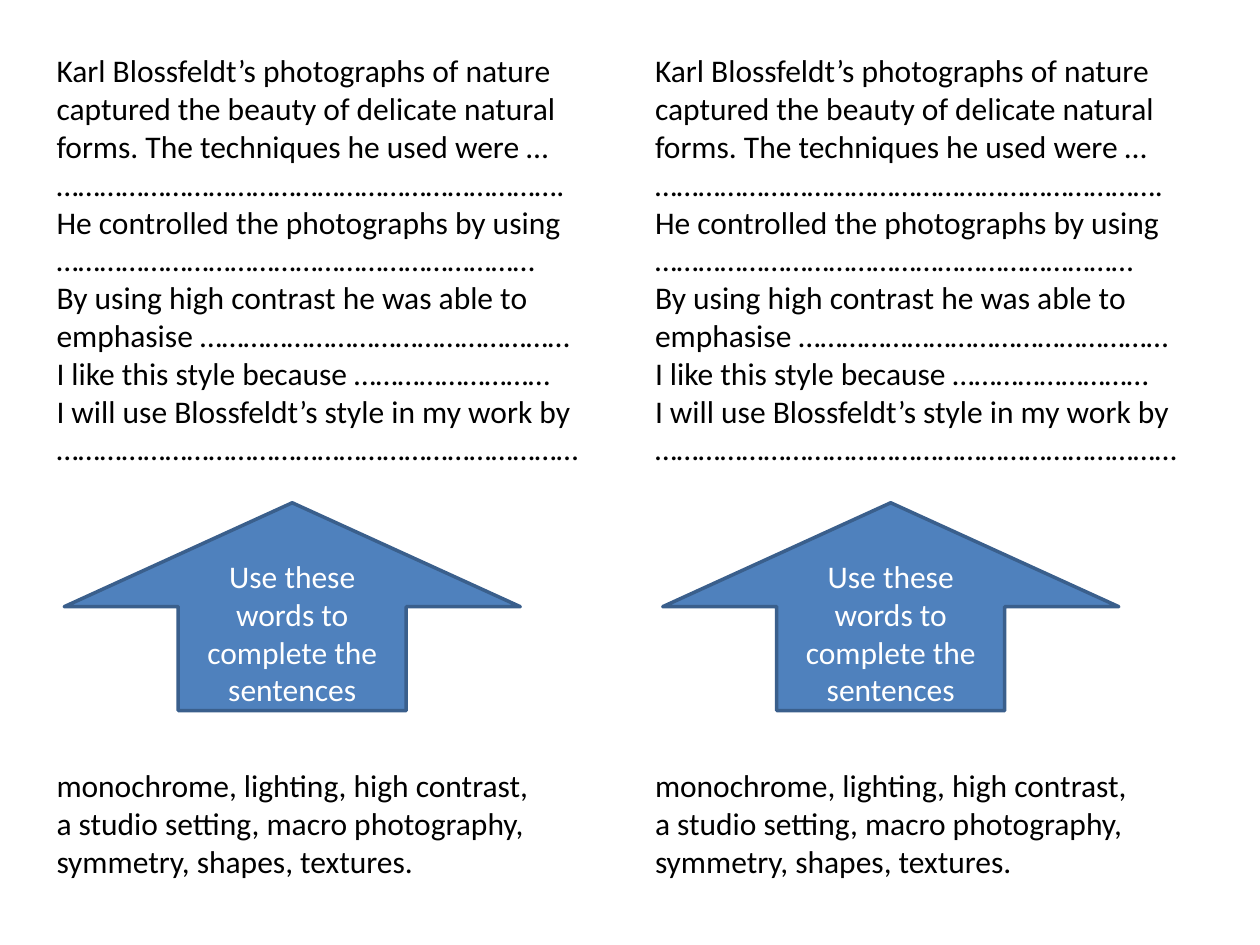
import pptx
import pptx.util
import pptx.dml.color
import pptx.enum.shapes
import pptx.enum.text

Pt = pptx.util.Pt
Align = pptx.enum.text.PP_ALIGN
Anchor = pptx.enum.text.MSO_ANCHOR

LINES = [
    "Karl Blossfeldt’s photographs of nature captured the beauty of delicate "
    "natural forms. The techniques he used were …",
    "…" * 21 + ".",
    "He controlled the photographs by using " + "…" * 20 + "",
    "By using high contrast he was able to emphasise ……………………………………………",
    "I like this style because ………………………",
    "I will use Blossfeldt’s style in my work by ………………………………………………………………",
]
LINES[1] = "……………………………………………………………."
LINES[2] = "He controlled the photographs by using …………………………………………………………"
WORDS = ("monochrome, lighting, high contrast, a studio setting, "
         "macro photography, symmetry, shapes, textures.")
HINT = "Use these words to complete the sentences"


def paint(target, color):
    """Set a fill or line fill to a solid hex colour."""
    target.solid()
    target.fore_color.rgb = pptx.dml.color.RGBColor.from_string(color)


def write(frame, lines, size=18, color="000000", align=Align.LEFT,
          anchor=Anchor.TOP):
    frame.word_wrap = True
    frame.vertical_anchor = anchor
    for i, line in enumerate(lines):
        para = frame.paragraphs[0] if i == 0 else frame.add_paragraph()
        para.text = line
        para.alignment = align
        para.font.name = "Calibri"
        para.font.size = Pt(size)
        paint(para.font.fill, color)


def add_text(slide, lines, left, top, width, height):
    box = slide.shapes.add_textbox(Pt(left), Pt(top), Pt(width), Pt(height))
    write(box.text_frame, lines)


def add_arrow(slide, text, left, top, width, height):
    arrow = slide.shapes.add_shape(
        pptx.enum.shapes.MSO_SHAPE.UP_ARROW,
        Pt(left), Pt(top), Pt(width), Pt(height))
    arrow.shadow.inherit = False
    paint(arrow.fill, "4F81BD")
    paint(arrow.line.fill, "3A5F8C")
    arrow.line.width = Pt(2)
    write(arrow.text_frame, [text], color="FFFFFF", align=Align.CENTER,
          anchor=Anchor.MIDDLE)


def main():
    deck = pptx.Presentation()
    deck.slide_width, deck.slide_height = Pt(720), Pt(540)
    slide = deck.slides.add_slide(deck.slide_layouts[6])
    for left in (25.2, 367.2):
        add_text(slide, LINES, left, 25.9, 317.5, 247)
        add_text(slide, [WORDS], left, 434.2, 294.5, 72.7)
        add_arrow(slide, HINT, left + 11.5, 287.3, 260.6, 118.8)
    deck.save("out.pptx")


if __name__ == "__main__":
    main()
